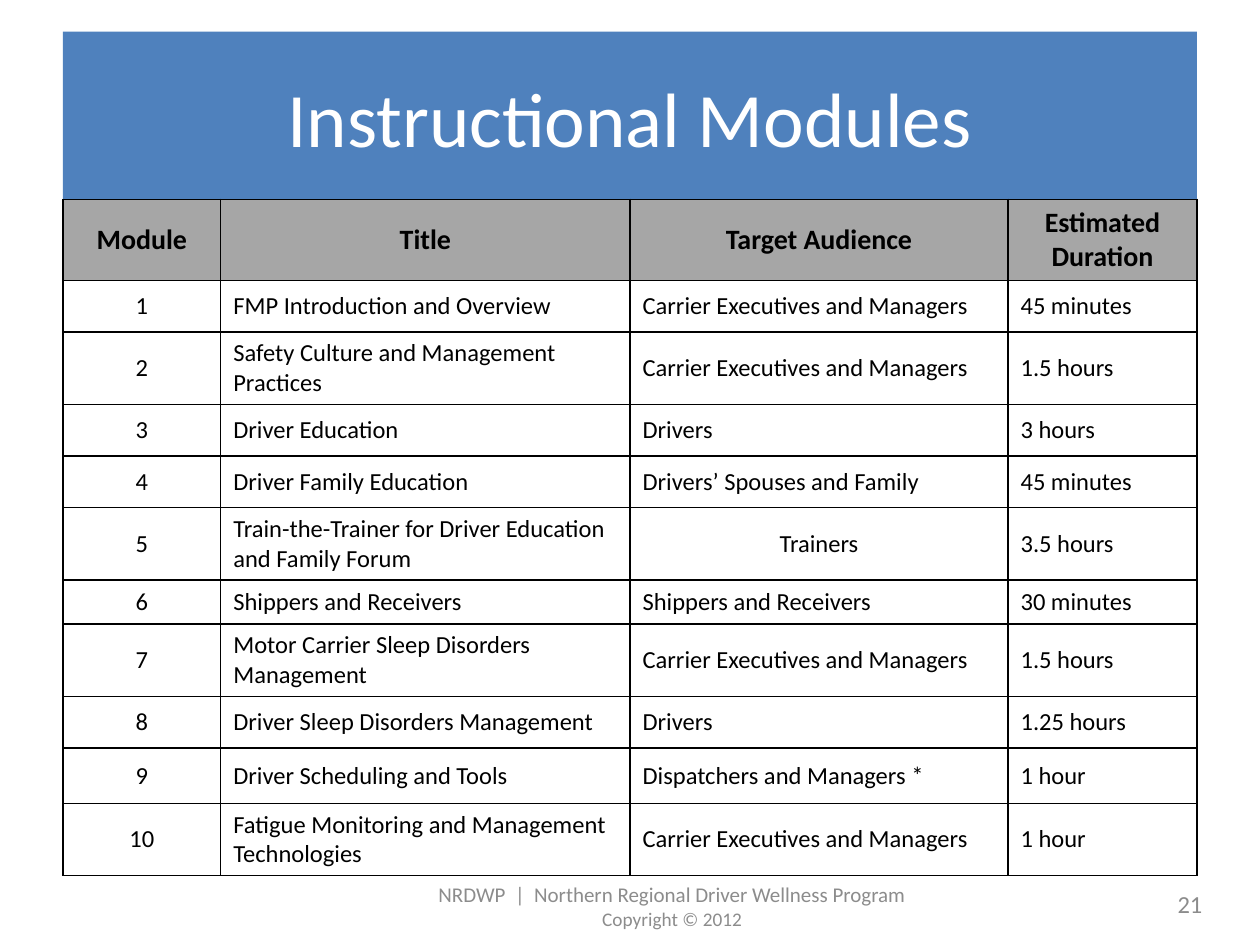
from dataclasses import dataclass
from typing import NamedTuple, Optional

from lxml.etree import SubElement
from pptx import Presentation
from pptx.dml.color import RGBColor
from pptx.enum.shapes import MSO_SHAPE as Preset
from pptx.enum.text import MSO_ANCHOR as Anchor, PP_ALIGN as Align
from pptx.oxml.ns import qn
from pptx.util import Cm, Pt


@dataclass(frozen=True)
class Theme:
    font: str = "Calibri"
    banner: str = "4F81BD"
    header_fill: str = "A6A6A6"
    ink: str = "000000"
    title_ink: str = "FFFFFF"
    footer_ink: str = "8C8C8C"
    title_size: int = 44
    header_size: int = 16
    body_size: int = 14
    footer_size: int = 12
    copyright_size: int = 11
    border_width: float = 1


class Box(NamedTuple):
    left: float
    top: float
    width: float
    height: float

    def lengths(self) -> tuple:
        return tuple(Cm(value) for value in self)


class Line(NamedTuple):
    text: str
    size: int
    color: str
    align: Align = Align.LEFT
    bold: bool = False


class Module(NamedTuple):
    title: str
    audience: str
    duration: str
    height: float = 1.04
    audience_align: Align = Align.LEFT


THEME = Theme()
BANNER = Box(1.27, 0.64, 22.86, 3.38)
TITLE = Box(1.27, 0.76, 22.86, 3.18)
TABLE = Box(1.27, 4.02, 22.86, 11.52)
FOOTER = Box(7.62, 18.01, 11.86, 0.97)
PAGE_NUMBER = Box(18.57, 17.7, 5.92, 1.02)

HEADERS = ("Module", "Title", "Target Audience", "Estimated Duration")
COLUMN_WIDTHS = (3.18, 8.25, 7.62, 3.81)
HEADER_HEIGHT = 1.04
MANAGERS = "Carrier Executives and Managers"
MODULES = (
    Module("FMP Introduction and Overview", MANAGERS, "45 minutes"),
    Module("Safety Culture and Management Practices", MANAGERS, "1.5 hours"),
    Module("Driver Education", "Drivers", "3 hours"),
    Module("Driver Family Education", "Drivers’ Spouses and Family", "45 minutes"),
    Module("Train-the-Trainer for Driver Education and Family Forum", "Trainers",
           "3.5 hours", audience_align=Align.CENTER),
    Module("Shippers and Receivers", "Shippers and Receivers", "30 minutes", 0.89),
    Module("Motor Carrier Sleep Disorders Management", MANAGERS, "1.5 hours"),
    Module("Driver Sleep Disorders Management", "Drivers", "1.25 hours"),
    Module("Driver Scheduling and Tools", "Dispatchers and Managers *", "1 hour", 1.12),
    Module("Fatigue Monitoring and Management Technologies", MANAGERS, "1 hour"),
)


def write_lines(text_frame, *lines: Line) -> None:
    text_frame.word_wrap = True
    for index, line in enumerate(lines):
        paragraph = text_frame.add_paragraph() if index else text_frame.paragraphs[0]
        paragraph.alignment = line.align
        run = paragraph.add_run()
        run.text = line.text
        run.font.name = THEME.font
        run.font.size = Pt(line.size)
        run.font.bold = line.bold
        run.font.color.rgb = RGBColor.from_string(line.color)


def add_banner(slide) -> None:
    banner = slide.shapes.add_shape(Preset.RECTANGLE, *BANNER.lengths())
    banner.shadow.inherit = False
    banner.fill.solid()
    banner.fill.fore_color.rgb = RGBColor.from_string(THEME.banner)
    banner.line.fill.background()


def place_title(slide, text: str) -> None:
    title = slide.shapes.title
    title.left, title.top, title.width, title.height = TITLE.lengths()
    title.text_frame.vertical_anchor = Anchor.MIDDLE
    write_lines(title.text_frame,
                Line(text, THEME.title_size, THEME.title_ink, Align.CENTER))
    title.element.getparent().append(title.element)


def add_text(slide, box: Box, *lines: Line):
    text_frame = slide.shapes.add_textbox(*box.lengths()).text_frame
    text_frame.vertical_anchor = Anchor.MIDDLE
    write_lines(text_frame, *lines)
    return text_frame


def add_borders(cell) -> None:
    properties = cell._tc.get_or_add_tcPr()
    for side in ("lnL", "lnR", "lnT", "lnB"):
        border = SubElement(properties, qn(f"a:{side}"), w=str(Pt(THEME.border_width)))
        fill = SubElement(border, qn("a:solidFill"))
        SubElement(fill, qn("a:srgbClr"), val=THEME.ink)


def fill_cell(cell, line: Line, fill: Optional[str] = None) -> None:
    add_borders(cell)
    if fill:
        cell.fill.solid()
        cell.fill.fore_color.rgb = RGBColor.from_string(fill)
    else:
        cell.fill.background()
    cell.vertical_anchor = Anchor.MIDDLE
    write_lines(cell.text_frame, line)


def add_module_table(slide) -> None:
    table = slide.shapes.add_table(len(MODULES) + 1, len(HEADERS), *TABLE.lengths()).table
    table.first_row = False
    table.horz_banding = False
    for column, width in zip(table.columns, COLUMN_WIDTHS):
        column.width = Cm(width)
    table.rows[0].height = Cm(HEADER_HEIGHT)
    for column, header in enumerate(HEADERS):
        fill_cell(table.cell(0, column),
                  Line(header, THEME.header_size, THEME.ink, Align.CENTER, True),
                  THEME.header_fill)
    for number, module in enumerate(MODULES, start=1):
        table.rows[number].height = Cm(module.height)
        entries = (
            (str(number), Align.CENTER),
            (module.title, Align.LEFT),
            (module.audience, module.audience_align),
            (module.duration, Align.LEFT),
        )
        for column, (text, align) in enumerate(entries):
            fill_cell(table.cell(number, column),
                      Line(text, THEME.body_size, THEME.ink, align))


def add_footer(slide) -> None:
    add_text(slide, PAGE_NUMBER,
             Line("21", THEME.body_size, THEME.footer_ink, Align.RIGHT))
    footer = add_text(
        slide, FOOTER,
        Line("NRDWP  |  Northern Regional Driver Wellness Program",
             THEME.footer_size, THEME.footer_ink, Align.CENTER),
        Line("Copyright © 2012", THEME.copyright_size, THEME.footer_ink, Align.CENTER))
    footer.margin_top = Cm(0)
    footer.margin_bottom = Cm(0.46)


def main() -> None:
    presentation = Presentation()
    presentation.slide_width = Cm(25.4)
    presentation.slide_height = Cm(19.05)
    slide = presentation.slides.add_slide(presentation.slide_layouts[5])
    add_banner(slide)
    add_footer(slide)
    place_title(slide, "Instructional Modules")
    add_module_table(slide)
    presentation.save("out.pptx")


if __name__ == "__main__":
    main()
